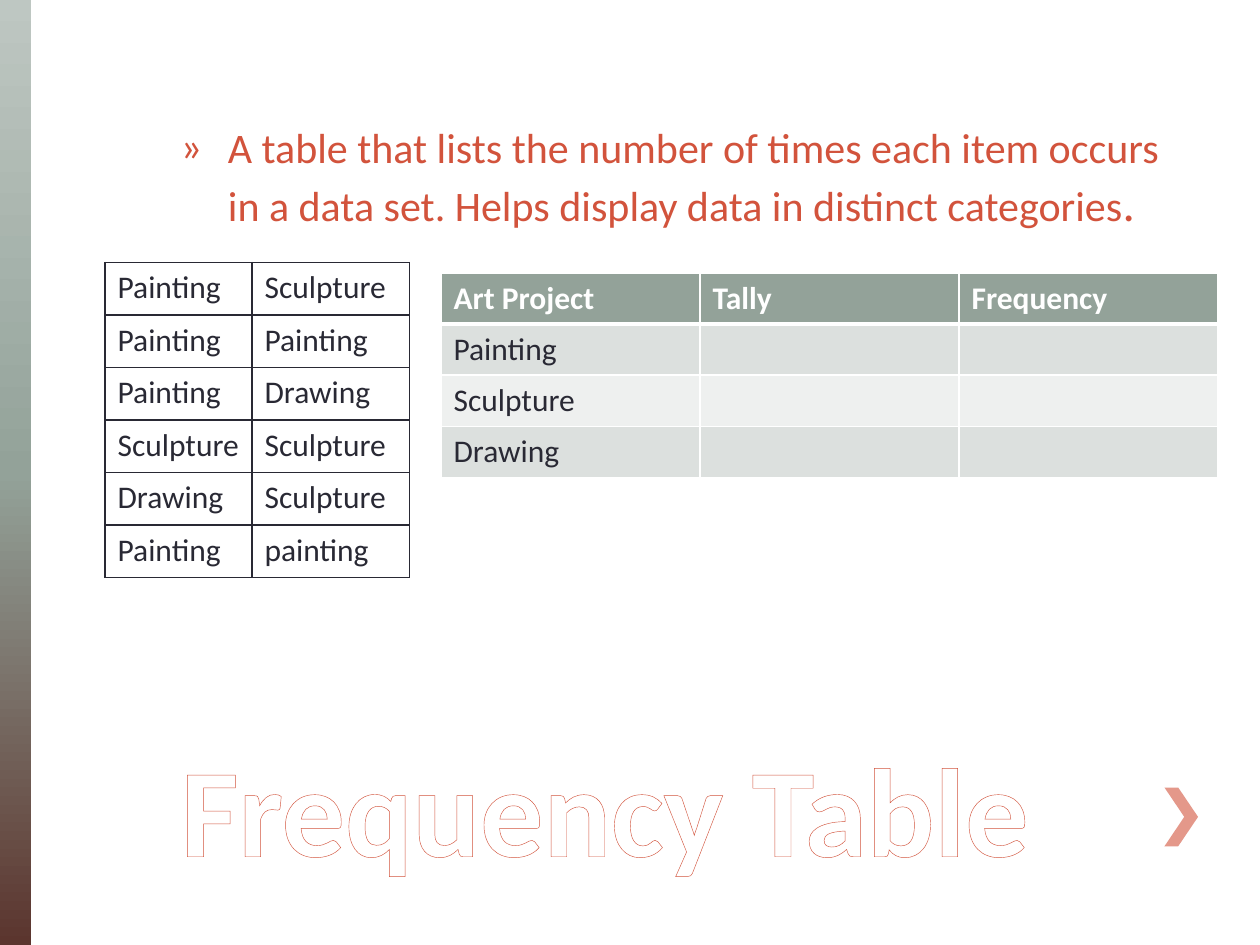
import copy
import dataclasses

import lxml.etree
import pptx
import pptx.dml.color
import pptx.enum.shapes
import pptx.enum.text
import pptx.oxml.ns
import pptx.util

RGBColor = pptx.dml.color.RGBColor
WHITE = RGBColor(0xFF, 0xFF, 0xFF)
INK = RGBColor(0x29, 0x29, 0x34)
RED = RGBColor(0xD2, 0x53, 0x3C)
SALMON = RGBColor(0xE4, 0x98, 0x8A)
SAGE = RGBColor(0x93, 0xA2, 0x99)
PALE_SAGE = RGBColor(0xBE, 0xC7, 0xC2)
BROWN = RGBColor(0x5B, 0x35, 0x2E)
DARK_BAND = RGBColor(0xDC, 0xE0, 0xDE)
LIGHT_BAND = RGBColor(0xEE, 0xF0, 0xEF)

FONT = "Calibri"
UNIT = pptx.util.Inches(1) / 12  # the grid has 120 columns and 90 rows
COLUMNS, ROWS = 120, 90


def grid(count: float) -> pptx.util.Emu:
    return pptx.util.Emu(round(count * UNIT))


@dataclasses.dataclass(frozen=True)
class Box:
    column: float
    row: float
    width: float
    height: float

    def lengths(self) -> list:
        return [grid(n) for n in (self.column, self.row, self.width, self.height)]


@dataclasses.dataclass(frozen=True)
class TableSpec:
    column: float
    row: float
    column_widths: tuple
    row_height: float
    texts: tuple
    border: RGBColor
    bands: tuple = ()
    header: bool = False


TABLES = (
    TableSpec(
        10, 25, (14, 15), 5,
        (
            ("Painting", "Sculpture"),
            ("Painting", "Painting"),
            ("Painting", "Drawing"),
            ("Sculpture", "Sculpture"),
            ("Drawing", "Sculpture"),
            ("Painting", "painting"),
        ),
        border=INK,
    ),
    TableSpec(
        42, 26, (74 / 3,) * 3, 4.87,
        (
            ("Art Project", "Tally", "Frequency"),
            ("Painting", "", ""),
            ("Sculpture", "", ""),
            ("Drawing", "", ""),
        ),
        border=WHITE,
        bands=(SAGE, DARK_BAND, LIGHT_BAND, DARK_BAND),
        header=True,
    ),
)


def add_text(paragraph, text: str, *, size: float, color: RGBColor, bold: bool = False):
    run = paragraph.add_run()
    run.text = text
    run.font.name = FONT
    run.font.size = pptx.util.Pt(size)
    run.font.bold = bold
    run.font.color.rgb = color
    return run


def line_element(tag: str, color: RGBColor, width: float):
    """Return a solid DrawingML line under the given tag."""
    name = pptx.oxml.ns.qn
    line = lxml.etree.Element(name(tag), w=str(pptx.util.Pt(width)))
    fill = lxml.etree.SubElement(line, name("a:solidFill"))
    lxml.etree.SubElement(fill, name("a:srgbClr"), val=str(color))
    return line


def place(shape, box: Box) -> None:
    shape.left, shape.top, shape.width, shape.height = box.lengths()


def add_rail(slide) -> None:
    rail = slide.shapes.add_shape(
        pptx.enum.shapes.MSO_SHAPE.RECTANGLE, *Box(0, 0, 3, ROWS).lengths()
    )
    rail.shadow.inherit = False
    rail.line.fill.background()
    rail.fill.gradient()
    rail.fill.gradient_angle = 270
    first = rail.fill._fill._gradFill.gsLst[0]
    first.addnext(copy.deepcopy(first))
    stops = ((0, PALE_SAGE), (0.5, SAGE), (1, BROWN))
    for stop, (position, color) in zip(rail.fill.gradient_stops, stops):
        stop.position = position
        stop.color.rgb = color


def add_chevron(slide, box: Box) -> None:
    shares = ((0.41, 0), (0, 0), (0.59, 0.5), (0, 1), (0.41, 1), (1, 0.5))
    points = [
        (grid(box.column + x * box.width), grid(box.row + y * box.height))
        for x, y in shares
    ]
    builder = slide.shapes.build_freeform(*points[0])
    builder.add_line_segments(points[1:], close=True)
    chevron = builder.convert_to_shape()
    chevron.shadow.inherit = False
    chevron.fill.solid()
    chevron.fill.fore_color.rgb = SALMON
    chevron.line.fill.background()


def fill_title(title) -> None:
    place(title, Box(16, 69, 95, 15))
    frame = title.text_frame
    frame.auto_size = pptx.enum.text.MSO_AUTO_SIZE.NONE
    frame.vertical_anchor = pptx.enum.text.MSO_ANCHOR.BOTTOM
    frame.margin_bottom = 0
    paragraph = frame.paragraphs[0]
    paragraph.alignment = pptx.enum.text.PP_ALIGN.LEFT
    run = add_text(paragraph, "Frequency Table", size=72, color=WHITE, bold=True)
    run.font._element.insert(0, line_element("a:ln", RED, 1))


def fill_body(body) -> None:
    place(body, Box(16, 11, 98, 58))
    body.text_frame.auto_size = pptx.enum.text.MSO_AUTO_SIZE.NONE
    paragraph = body.text_frame.paragraphs[0]
    paragraph.space_before = pptx.util.Pt(5)
    properties = paragraph._p.get_or_add_pPr()
    properties.set("marL", str(grid(4.5)))
    properties.set("indent", str(-grid(4.5)))
    name = pptx.oxml.ns.qn
    lxml.etree.SubElement(properties, name("a:buFont"), typeface=FONT)
    lxml.etree.SubElement(properties, name("a:buChar"), char="»")
    definition = (
        "A table that lists the number of times each item occurs in a data set. "
        "Helps display data in distinct categories"
    )
    add_text(paragraph, definition, size=24, color=RED)
    add_text(paragraph, ".", size=28, color=RED)


def add_table(slide, spec: TableSpec) -> None:
    row_count = len(spec.texts)
    box = Box(spec.column, spec.row, sum(spec.column_widths), row_count * spec.row_height)
    table = slide.shapes.add_table(
        row_count, len(spec.column_widths), *box.lengths()
    ).table
    table.first_row = spec.header
    table.horz_banding = bool(spec.bands)
    for column, width in zip(table.columns, spec.column_widths):
        column.width = grid(width)
    for row_index, texts in enumerate(spec.texts):
        table.rows[row_index].height = grid(spec.row_height)
        is_header = spec.header and row_index == 0
        for column_index, text in enumerate(texts):
            cell = table.cell(row_index, column_index)
            if spec.bands:
                cell.fill.solid()
                cell.fill.fore_color.rgb = spec.bands[row_index]
            else:
                cell.fill.background()
            below_header = spec.header and row_index == 1
            widths = (1, 1, 3 if below_header else 1, 3 if is_header else 1)
            for position, (side, width) in enumerate(zip("LRTB", widths)):
                border = line_element(f"a:ln{side}", spec.border, width)
                cell._tc.get_or_add_tcPr().insert(position, border)
            if text:
                add_text(
                    cell.text_frame.paragraphs[0], text, size=18,
                    color=WHITE if is_header else INK, bold=is_header,
                )


def main() -> None:
    presentation = pptx.Presentation()
    presentation.slide_width = grid(COLUMNS)
    presentation.slide_height = grid(ROWS)
    slide = presentation.slides.add_slide(presentation.slide_layouts[1])
    add_rail(slide)
    add_chevron(slide, Box(110.9, 75, 3.2, 5.6))
    fill_title(slide.shapes.title)
    fill_body(slide.placeholders[1])
    for spec in TABLES:
        add_table(slide, spec)
    presentation.save("out.pptx")


if __name__ == "__main__":
    main()
